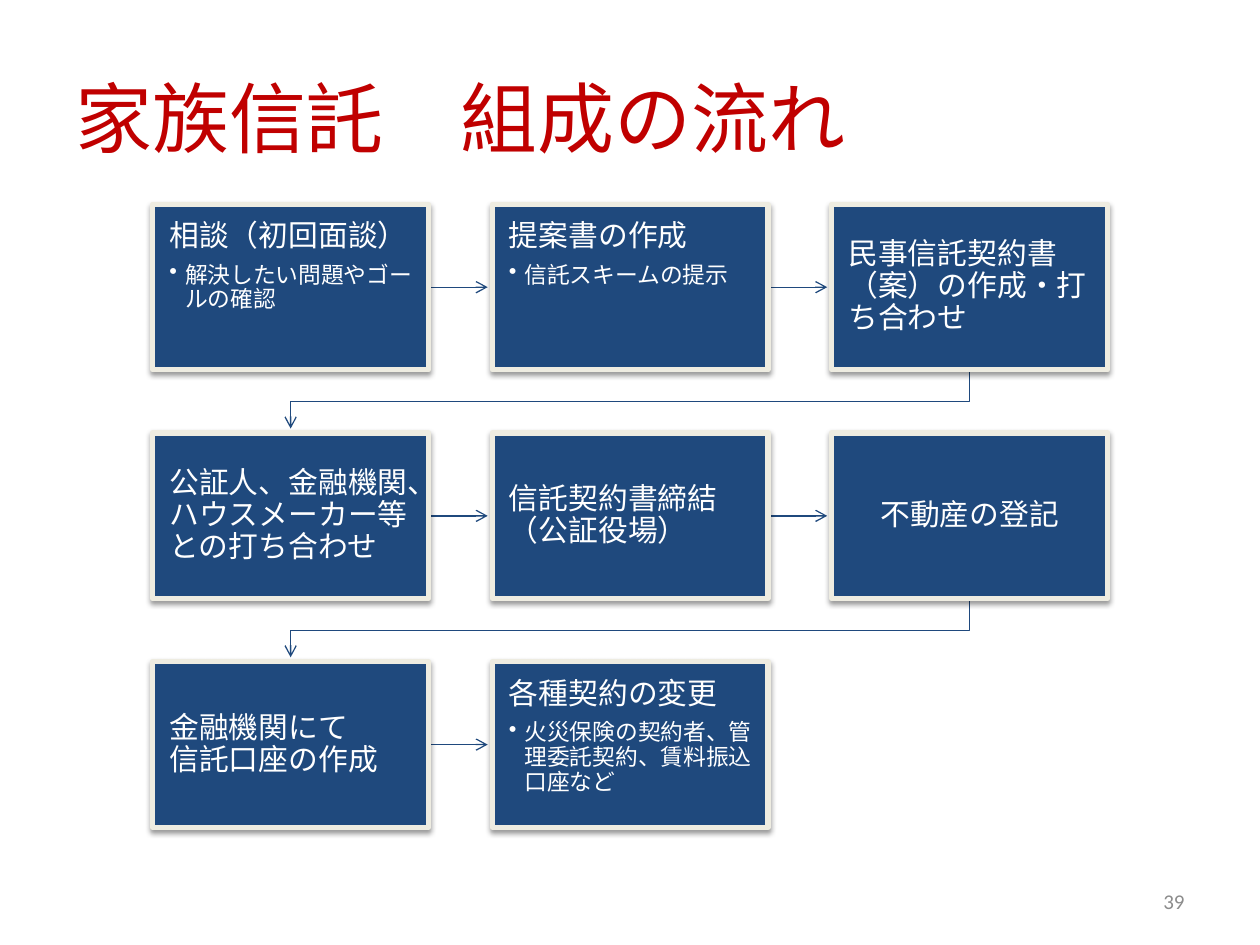
"""Build the slide that shows the steps of setting up a family trust."""
import lxml.etree
import pptx
import pptx.dml.color
import pptx.enum.shapes
import pptx.enum.text
import pptx.oxml
import pptx.oxml.ns
import pptx.util

Pt = pptx.util.Pt
RGBColor = pptx.dml.color.RGBColor
Align = pptx.enum.text.PP_ALIGN
Anchor = pptx.enum.text.MSO_ANCHOR
qn = pptx.oxml.ns.qn

NAVY = RGBColor(0x1F, 0x49, 0x7D)
CREAM = RGBColor(0xEE, 0xEC, 0xE1)
WHITE = RGBColor(0xFF, 0xFF, 0xFF)
RED = RGBColor(0xC0, 0x00, 0x00)
GRAY = RGBColor(0x8C, 0x8C, 0x8C)

LEFT, TOP = 87.3, 116.8
BOX_WIDTH, BOX_HEIGHT = 157.6, 94.6
COLUMN_STEP, ROW_STEP = 194, 130.7
COLUMNS = 3
ARROW_GAP = 2.6

STEPS = [
    ("相談（初回面談）", "解決したい問題やゴールの確認"),
    ("提案書の作成", "信託スキームの提示"),
    ("民事信託契約書（案）の作成・打ち合わせ", None),
    ("公証人、金融機関、ハウスメーカー等との打ち合わせ", None),
    ("信託契約書締結\n（公証役場）", None),
    ("不動産の登記", None),
    ("金融機関にて\n信託口座の作成", None),
    ("各種契約の変更", "火災保険の契約者、管理委託契約、賃料振込口座など"),
]
CENTERED_STEP = "不動産の登記"


def write(paragraph, text, *, size, color, align=Align.LEFT, spacing=None, after=0, bullet=False):
    """Fill a paragraph with formatted text."""
    paragraph.text = text
    paragraph.alignment = align
    paragraph.line_spacing = spacing
    paragraph.space_after = Pt(after)
    for run in paragraph.runs:
        run.font.name = "Calibri"
        run.font.size = Pt(size)
        run.font.color.rgb = color
    if bullet:
        properties = paragraph._p.get_or_add_pPr()
        properties.set("marL", str(Pt(9)))
        properties.set("indent", str(Pt(-9)))
        lxml.etree.SubElement(properties, qn("a:buChar")).set("char", "•")


class FlowSlide:
    """Hold the style and the slide being drawn."""

    def __init__(self, slide):
        self.slide = slide
        self.arrow_width = 0.75
        self.border_width = 3
        self.inset = 9.5

    def label(self, text, left, top, width, height, **style):
        """Add a text box centred vertically."""
        frame = self.slide.shapes.add_textbox(Pt(left), Pt(top), Pt(width), Pt(height)).text_frame
        frame.word_wrap = True
        frame.vertical_anchor = Anchor.MIDDLE
        write(frame.paragraphs[0], text, **style)

    def step(self, heading, detail, left, top):
        """Add a bordered box with a heading and an optional bullet."""
        box = self.slide.shapes.add_shape(
            pptx.enum.shapes.MSO_SHAPE.RECTANGLE, Pt(left), Pt(top), Pt(BOX_WIDTH), Pt(BOX_HEIGHT))
        box.fill.solid()
        box.fill.fore_color.rgb = NAVY
        box.line.color.rgb = CREAM
        box.line.width = Pt(self.border_width)
        self.drop_shadow(box)
        frame = box.text_frame
        frame.word_wrap = True
        frame.margin_left = frame.margin_right = Pt(self.inset)
        frame.margin_top = frame.margin_bottom = Pt(self.inset)
        frame.vertical_anchor = Anchor.TOP if detail else Anchor.MIDDLE
        align = Align.CENTER if heading == CENTERED_STEP else Align.LEFT
        write(frame.paragraphs[0], heading, size=17, color=WHITE, align=align,
              spacing=0.9, after=6 if detail else 0)
        if detail:
            write(frame.add_paragraph(), detail, size=13, color=WHITE, spacing=0.9, bullet=True)

    def drop_shadow(self, box):
        """Give a box a soft shadow below it."""
        box.shadow.inherit = False
        effects = box._element.spPr.find(qn("a:effectLst"))
        shadow = lxml.etree.SubElement(effects, qn("a:outerShdw"), blurRad=str(Pt(3.1)),
                                       dist=str(Pt(1.6)), dir="5400000", rotWithShape="0")
        black = lxml.etree.SubElement(shadow, qn("a:srgbClr"), val="000000")
        lxml.etree.SubElement(black, qn("a:alpha"), val="38000")

    def arrow_style(self, arrow):
        """Colour an arrow, give it an open head and remove its shadow."""
        arrow.line.color.rgb = NAVY
        arrow.line.width = Pt(self.arrow_width)
        lxml.etree.SubElement(arrow.line._get_or_add_ln(), qn("a:tailEnd"), type="arrow")
        properties = arrow._element.spPr
        if properties.find(qn("a:effectLst")) is None:
            lxml.etree.SubElement(properties, qn("a:effectLst"))

    def straight_arrow(self, left, top):
        """Join a box to the next one in its row."""
        middle = Pt(top + BOX_HEIGHT / 2)
        arrow = self.slide.shapes.add_connector(
            pptx.enum.shapes.MSO_CONNECTOR.STRAIGHT, Pt(left + BOX_WIDTH), middle,
            Pt(left + COLUMN_STEP - ARROW_GAP), middle)
        self.arrow_style(arrow)

    def return_arrow(self, left, top):
        """Join the last box of a row to the first box of the next row."""
        start = Pt(left + BOX_WIDTH / 2)
        end = Pt(LEFT + BOX_WIDTH / 2)
        bottom = top + BOX_HEIGHT
        turn = Pt(bottom + (ROW_STEP - BOX_HEIGHT) / 2)
        outline = self.slide.shapes.build_freeform(start, Pt(bottom))
        outline.add_line_segments(
            [(start, turn), (end, turn), (end, Pt(top + ROW_STEP - ARROW_GAP))], close=False)
        arrow = outline.convert_to_shape()
        arrow.fill.background()
        self.arrow_style(arrow)


def main():
    """Draw the slide and save it."""
    deck = pptx.Presentation()
    deck.slide_width, deck.slide_height = Pt(720), Pt(540)
    flow = FlowSlide(deck.slides.add_slide(deck.slide_layouts[6]))
    flow.label("家族信託　組成の流れ", 36, 21.6, 648, 90, size=44, color=RED)
    for index, (heading, detail) in enumerate(STEPS):
        row, column = divmod(index, COLUMNS)
        left, top = LEFT + column * COLUMN_STEP, TOP + row * ROW_STEP
        if index < len(STEPS) - 1:
            join = flow.return_arrow if column == COLUMNS - 1 else flow.straight_arrow
            join(left, top)
        flow.step(heading, detail, left, top)
    flow.label("39", 516, 500.5, 168, 28.8, size=12, color=GRAY, align=Align.RIGHT)
    deck.save("out.pptx")


if __name__ == "__main__":
    main()
